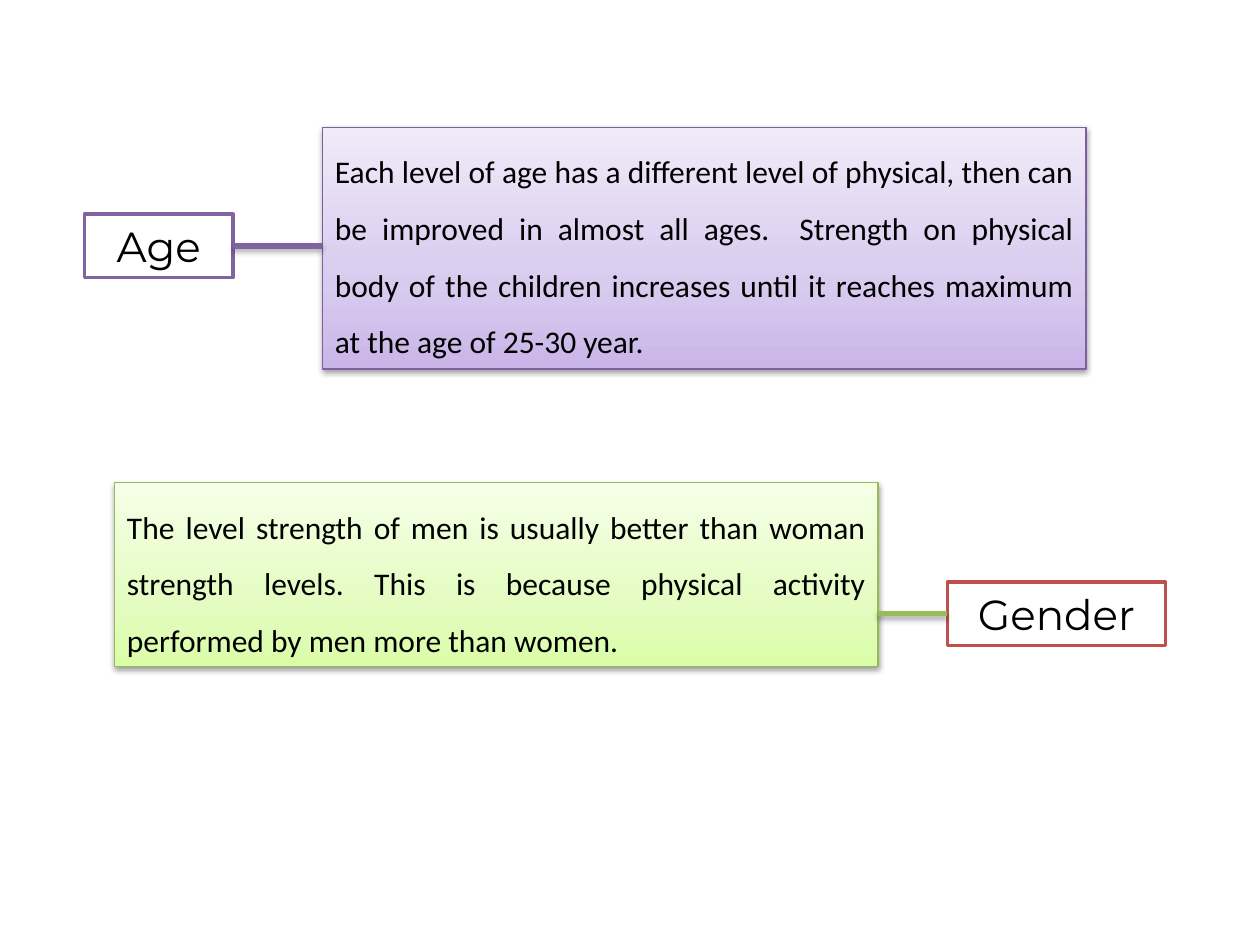
from copy import deepcopy
from lxml.etree import SubElement
from pptx import Presentation
from pptx.dml.color import RGBColor
from pptx.enum.shapes import MSO_CONNECTOR, MSO_SHAPE
from pptx.enum.text import MSO_ANCHOR, MSO_AUTO_SIZE, PP_ALIGN
from pptx.oxml.ns import qn
from pptx.util import Pt


def color(value):
    return RGBColor.from_string(value)


def add_shadow(shape, distance, opacity):
    properties = shape._element.spPr
    effects = properties.find(qn("a:effectLst"))
    if effects is None:
        effects = SubElement(properties, qn("a:effectLst"))
    shadow = SubElement(effects, qn("a:outerShdw"), blurRad=str(Pt(3.15)),
                        dist=str(Pt(distance)), dir="5400000", rotWithShape="0")
    black = SubElement(shadow, qn("a:srgbClr"), val="000000")
    SubElement(black, qn("a:alpha"), val=str(opacity * 1000))


presentation = Presentation()
presentation.slide_width = Pt(720)
presentation.slide_height = Pt(540)
slide = presentation.slides.add_slide(presentation.slide_layouts[6])

age_text = ("Each level of age has a different level of physical, then can be "
            "improved in almost all ages.  Strength on physical body of the children "
            "increases until it reaches maximum at the age of 25-30 year.")
gender_text = ("The level strength of men is usually better than woman strength levels. "
               "This is because physical activity performed by men more than women.")
purple = ["C9B5E8", "D8CBEE", "F0EAF9"]
green = ["DAFDA7", "E4FCC2", "F5FFE7"]

boxes = [
    ("Age", 48.2, 122.4, 85, 36.35, "8064A2", None),
    (age_text, 184.3, 72.7, 436.3, 138.2, "7D60A0", purple),
    ("Gender", 541.4, 332.6, 124.6, 36.35, "C0504D", None),
    (gender_text, 65.5, 275.8, 436.3, 105.1, "98B955", green),
]
shapes = []
for text, left, top, width, height, outline, gradient in boxes:
    shape = slide.shapes.add_shape(MSO_SHAPE.RECTANGLE, Pt(left), Pt(top), Pt(width), Pt(height))
    shapes.append(shape)
    shape.shadow.inherit = False
    shape.line.color.rgb = color(outline)
    shape.line.width = Pt(0.75 if gradient else 2)
    text_frame = shape.text_frame
    text_frame.word_wrap = True
    text_frame.auto_size = MSO_AUTO_SIZE.SHAPE_TO_FIT_TEXT
    text_frame.vertical_anchor = MSO_ANCHOR.TOP
    text_frame.text = text
    paragraph = text_frame.paragraphs[0]
    font = paragraph.runs[0].font
    font.color.rgb = color("000000")
    if gradient:
        shape.fill.gradient()
        shape.fill.gradient_angle = 90
        stop_list = shape._element.spPr.find(qn("a:gradFill")).find(qn("a:gsLst"))
        stop_list.append(deepcopy(stop_list[-1]))
        for stop, position, value in zip(shape.fill.gradient_stops, (0, 0.35, 1), gradient):
            stop.position = position
            stop.color.rgb = color(value)
        add_shadow(shape, 1.57, 38)
        paragraph.alignment = PP_ALIGN.JUSTIFY
        paragraph.line_spacing = 1.5
        font.name = "Calibri"
        font.size = Pt(18)
    else:
        shape.fill.solid()
        shape.fill.fore_color.rgb = color("FFFFFF")
        paragraph.alignment = PP_ALIGN.CENTER
        font.name = "Montserrat"
        font.size = Pt(24)

age_label, age_box, gender_label, gender_box = shapes
links = [
    (age_label, 3, age_box.left, "8064A2"),
    (gender_label, 1, gender_box.left + gender_box.width, "9BBB59"),
]
for label, side, box_edge, value in links:
    middle = label.top + label.height // 2
    label_edge = label.left + (label.width if side == 3 else 0)
    connector = slide.shapes.add_connector(MSO_CONNECTOR.STRAIGHT, label_edge, middle, box_edge, middle)
    connector.begin_connect(label, side)
    connector.line.color.rgb = color(value)
    connector.line.width = Pt(3)
    add_shadow(connector, 1.81, 35)

presentation.save("out.pptx")
